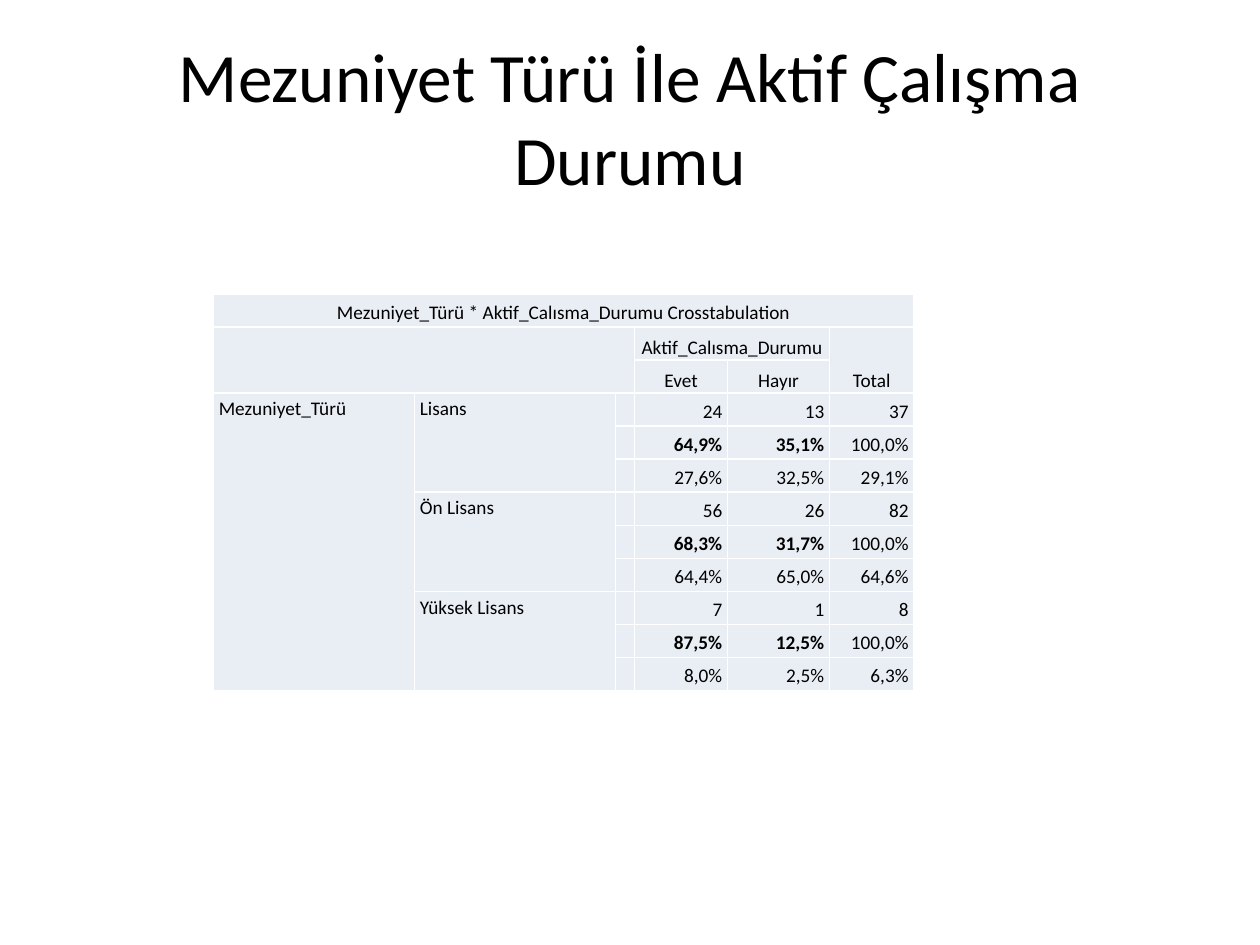
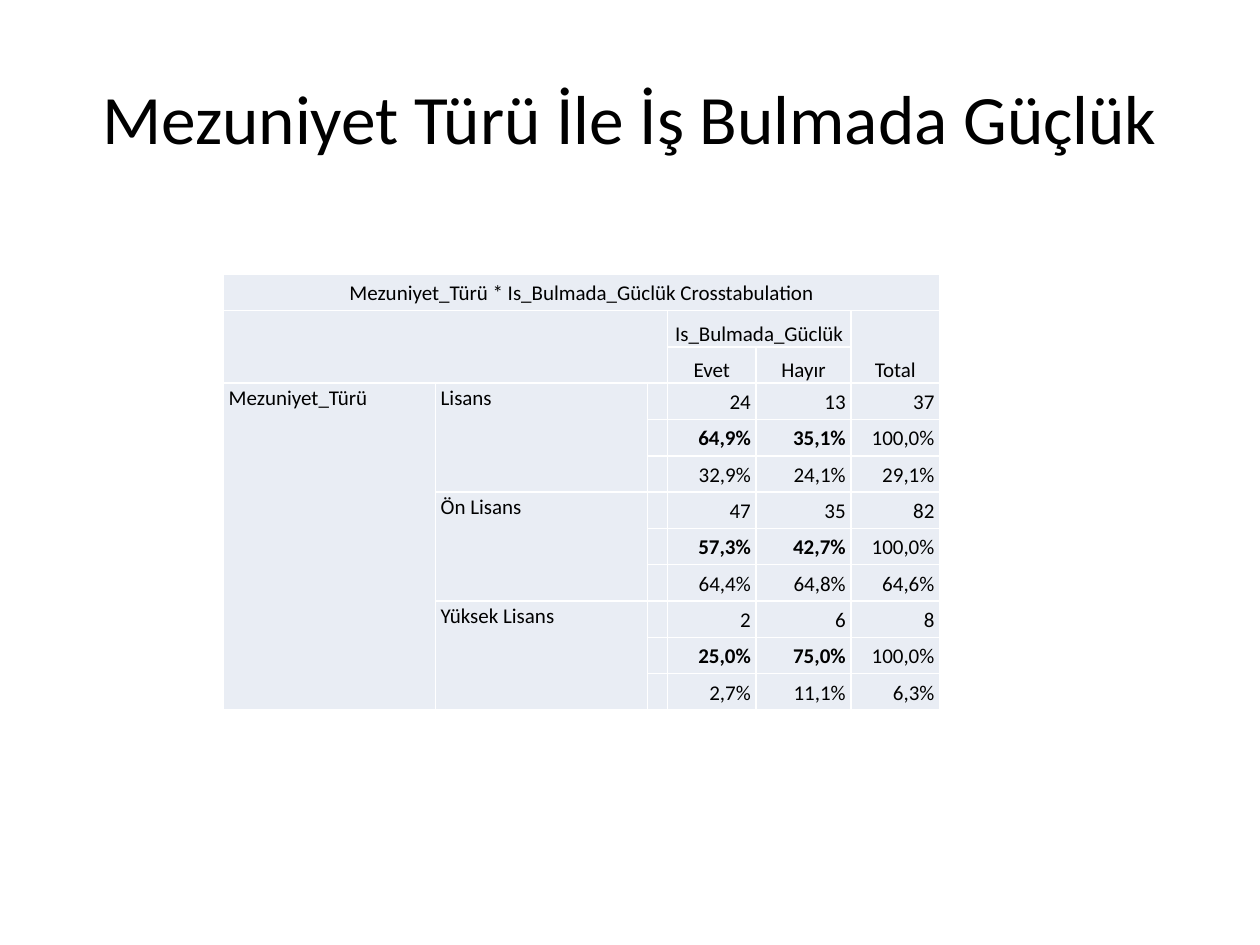
from pptx import Presentation
from pptx.dml.color import RGBColor
from pptx.enum.text import MSO_ANCHOR as Anchor, PP_ALIGN as Align
from pptx.util import Pt

FONT = "Calibri"
BLACK = "000000"
CELL_FILL = "E9EDF4"
TITLE_BOX = (36, 21.6, 648, 90)
TITLE_SIZE = 39.6
LINE_SPACING = 16
INDENT = 3

# Rows and columns of the crosstab
HEADER_ROWS = 3
ROWS_PER_GROUP = 3
FIRST_VALUE_COL = 3
DEGREES = ["Lisans", "Ön Lisans", "Yüksek Lisans"]

# Each group holds counts, row percentages and column percentages
WORK_VALUES = [
    ("24", "13", "37"), ("64,9%", "35,1%", "100,0%"), ("27,6%", "32,5%", "29,1%"),
    ("56", "26", "82"), ("68,3%", "31,7%", "100,0%"), ("64,4%", "65,0%", "64,6%"),
    ("7", "1", "8"), ("87,5%", "12,5%", "100,0%"), ("8,0%", "2,5%", "6,3%"),
]
JOB_SEARCH_VALUES = [
    ("24", "13", "37"), ("64,9%", "35,1%", "100,0%"), ("32,9%", "24,1%", "29,1%"),
    ("47", "35", "82"), ("57,3%", "42,7%", "100,0%"), ("64,4%", "64,8%", "64,6%"),
    ("2", "6", "8"), ("25,0%", "75,0%", "100,0%"), ("2,7%", "11,1%", "6,3%"),
]


def color(hex_code):
    return RGBColor.from_string(hex_code)


def format_runs(paragraph, size, bold=False):
    for span in paragraph.runs:
        span.font.name = FONT
        span.font.size = Pt(size)
        span.font.bold = bold
        span.font.color.rgb = color(BLACK)


def add_titled_page(deck, text):
    page = deck.slides.add_slide(deck.slide_layouts[5])
    title = page.shapes.title
    title.left, title.top, title.width, title.height = map(Pt, TITLE_BOX)
    title.text_frame.text = text
    title.text_frame.vertical_anchor = Anchor.MIDDLE
    para = title.text_frame.paragraphs[0]
    para.alignment = Align.CENTER
    format_runs(para, TITLE_SIZE)
    return page


def style_cell(cell, size):
    cell.fill.solid()
    cell.fill.fore_color.rgb = color(CELL_FILL)
    cell.margin_left = cell.margin_right = 0
    cell.margin_top = cell.margin_bottom = 0
    para = cell.text_frame.paragraphs[0]
    para.line_spacing = Pt(LINE_SPACING)
    # Text size of empty cells, so that they do not stretch their row
    para._p.get_or_add_endParaRPr().set("sz", str(size * 100))


def write_cell(cell, text, size, align, anchor, bold=False):
    cell.text_frame.text = text
    cell.vertical_anchor = anchor
    para = cell.text_frame.paragraphs[0]
    para.alignment = align
    para.line_spacing = Pt(LINE_SPACING)
    # Paragraph indents on both sides
    properties = para._p.get_or_add_pPr()
    for side in ("marL", "marR"):
        properties.set(side, str(Pt(INDENT)))
    format_runs(para, size, bold)


def add_crosstab(page, variable, values, left, top, widths, row_height, size):
    row_count = HEADER_ROWS + len(values)
    frame = page.shapes.add_table(row_count, len(widths), Pt(left), Pt(top),
                                  Pt(sum(widths)), Pt(row_height * row_count))
    table = frame.table
    table.first_row = table.horz_banding = False
    for column, width in zip(table.columns, widths):
        column.width = Pt(width)
    for row in table.rows:
        row.height = Pt(row_height)
    for cell in table.iter_cells():
        style_cell(cell, size)

    # Merged areas: first and last cell
    degree_rows = range(HEADER_ROWS, row_count, ROWS_PER_GROUP)
    merges = [((0, 0), (0, 5)), ((1, 0), (2, 2)), ((1, 3), (1, 4)),
              ((1, 5), (2, 5)), ((HEADER_ROWS, 0), (row_count - 1, 0))]
    merges += [((row, 1), (row + ROWS_PER_GROUP - 1, 1)) for row in degree_rows]
    for first, last in merges:
        table.cell(*first).merge(table.cell(*last))

    # Caption and column headings
    write_cell(table.cell(0, 0), f"Mezuniyet_Türü * {variable} Crosstabulation",
               size, Align.CENTER, Anchor.MIDDLE)
    headings = {(1, 3): variable, (1, 5): "Total", (2, 3): "Evet", (2, 4): "Hayır"}
    for place, text in headings.items():
        write_cell(table.cell(*place), text, size, Align.CENTER, Anchor.BOTTOM)

    # Row headings
    row_headings = {(HEADER_ROWS, 0): "Mezuniyet_Türü"}
    row_headings.update({(row, 1): name for row, name in zip(degree_rows, DEGREES)})
    for place, text in row_headings.items():
        write_cell(table.cell(*place), text, size, Align.LEFT, Anchor.TOP)

    # Values, with the row percentages of both answers in bold
    for index, row_values in enumerate(values):
        for offset, text in enumerate(row_values):
            bold = index % ROWS_PER_GROUP == 1 and offset < 2
            cell = table.cell(HEADER_ROWS + index, FIRST_VALUE_COL + offset)
            write_cell(cell, text, size, Align.RIGHT, Anchor.MIDDLE, bold)


def main():
    deck = Presentation()
    deck.slide_width, deck.slide_height = Pt(720), Pt(540)

    # Degree and current employment
    page = add_titled_page(deck, "Mezuniyet Türü İle Aktif Çalışma Durumu")
    add_crosstab(page, "Aktif_Calısma_Durumu", WORK_VALUES, left=122, top=168,
                 widths=[114.9, 114.9, 10.8, 53.2, 58.3, 48.2],
                 row_height=18.9, size=11)

    # Degree and difficulty in finding a job
    page = add_titled_page(deck, "Mezuniyet Türü İle İş Bulmada Güçlük")
    add_crosstab(page, "Is_Bulmada_Güclük", JOB_SEARCH_VALUES, left=127.7, top=156.7,
                 widths=[121.1, 121.1, 11.5, 50.7, 54.2, 50.7],
                 row_height=20.77, size=12)

    deck.save("out.pptx")


if __name__ == "__main__":
    main()
